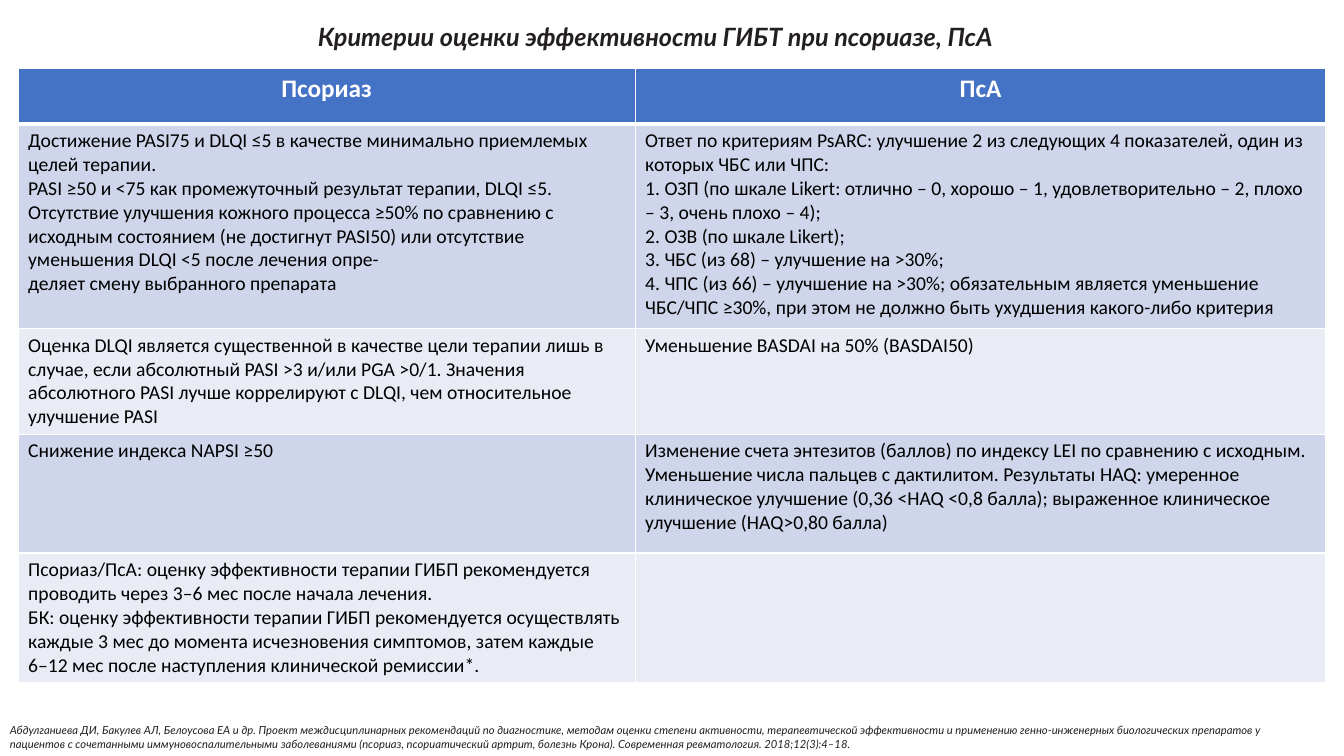
import pptx
import pptx.util
import pptx.dml.color
import pptx.enum.text
import pptx.oxml.ns
import lxml.etree
from dataclasses import dataclass

Inches = pptx.util.Inches
PP_ALIGN = pptx.enum.text.PP_ALIGN
ANCHOR = pptx.enum.text.MSO_ANCHOR

TITLE = "Критерии оценки эффективности ГИБТ при псориазе, ПсА"
HEADERS = ["Псориаз", "ПсА"]
CRITERIA = [
    (
        [
            "Достижение PASI75 и DLQI ≤5 в качестве минимально приемлемых целей терапии.",
            "PASI ≥50 и <75 как промежуточный результат терапии, DLQI ≤5.",
            "Отсутствие улучшения кожного процесса ≥50% по сравнению с исходным состоянием "
            "(не достигнут PASI50) или отсутствие уменьшения DLQI <5 после лечения опре-",
            "деляет смену выбранного препарата",
        ],
        [
            "Ответ по критериям PsARC: улучшение 2 из следующих 4 показателей, один из которых ЧБС или ЧПС:",
            "1. ОЗП (по шкале Likert: отлично – 0, хорошо – 1, удовлетворительно – 2, плохо – 3, очень плохо – 4);",
            "2. ОЗВ (по шкале Likert);",
            "3. ЧБС (из 68) – улучшение на >30%;",
            "4. ЧПС (из 66) – улучшение на >30%; обязательным является уменьшение ЧБС/ЧПС ≥30%, "
            "при этом не должно быть ухудшения какого-либо критерия",
        ],
    ),
    (
        [
            "Оценка DLQI является существенной в качестве цели терапии лишь в случае, если абсолютный "
            "PASI >3 и/или PGA >0/1. Значения абсолютного PASI лучше коррелируют с DLQI, "
            "чем относительное улучшение PASI",
        ],
        ["Уменьшение BASDAI на 50% (BASDAI50)"],
    ),
    (
        ["Снижение индекса NAPSI ≥50"],
        [
            "Изменение счета энтезитов (баллов) по индексу LEI по сравнению с исходным. "
            "Уменьшение числа пальцев с дактилитом. Результаты HAQ: умеренное клиническое улучшение "
            "(0,36 <HAQ <0,8 балла); выраженное клиническое улучшение (HAQ>0,80 балла)",
        ],
    ),
    (
        [
            "Псориаз/ПсА: оценку эффективности терапии ГИБП рекомендуется проводить "
            "через 3–6 мес после начала лечения.",
            "БК: оценку эффективности терапии ГИБП рекомендуется осуществлять каждые 3 мес "
            "до момента исчезновения симптомов, затем каждые",
            "6–12 мес после наступления клинической ремиссии*.",
        ],
        [],
    ),
]
CITATION = (
    "Абдулганиева ДИ, Бакулев АЛ, Белоусова ЕА и др. Проект междисциплинарных рекомендаций по "
    "диагностике, методам оценки степени активности, терапевтической эффективности и применению "
    "генно-инженерных биологических препаратов у пациентов с сочетанными иммуновоспалительными "
    "заболеваниями (псориаз, псориатический артрит, болезнь Крона). Современная ревматология. "
    "2018;12(3):4–18."
)
COLUMN_WIDTHS = [6.12, 6.85]
ROW_HEIGHTS = [0.55, 2.03, 1.02, 1.18, 1.28]
TABLE_LEFT, TABLE_TOP = 0.18, 0.68


@dataclass(frozen=True)
class Theme:
    ink: str = "231F20"
    black: str = "000000"
    white: str = "FFFFFF"
    header: str = "4472C4"
    bands: tuple = ("CFD5EA", "E9EBF5")
    heading_size: int = 18
    body_size: int = 14
    citation_size: int = 8
    accent_font: str = "Lato"
    table_font: str = "Calibri"
    border: int = 1
    header_border: int = 3


THEME = Theme()
TITLE_FORMAT = dict(name=THEME.accent_font, size=THEME.heading_size, color=THEME.ink, bold=True, italic=True)
HEADER_FORMAT = dict(name=THEME.table_font, size=THEME.heading_size, color=THEME.white, bold=True)
BODY_FORMAT = dict(name=THEME.table_font, size=THEME.body_size, color=THEME.black, bold=False)
CITATION_FORMAT = dict(name=THEME.accent_font, size=THEME.citation_size, color=THEME.ink, italic=True)


def rgb(color):
    return pptx.dml.color.RGBColor.from_string(color)


def write(frame, lines, format_values, align=PP_ALIGN.LEFT, spacing=None):
    """Put each line in its own paragraph, with one format for all."""
    for index, line in enumerate(lines):
        para = frame.add_paragraph() if index else frame.paragraphs[0]
        para.alignment = align
        para.line_spacing = spacing
        span = para.add_run()
        span.text = line
        for key, value in format_values.items():
            if key == "color":
                span.font.color.rgb = rgb(value)
            else:
                setattr(span.font, key, pptx.util.Pt(value) if key == "size" else value)


def set_borders(cell, widths):
    """Draw white cell borders; widths maps side tags to points."""
    properties = cell._tc.get_or_add_tcPr()
    qn = pptx.oxml.ns.qn
    for side, width in widths.items():
        line = lxml.etree.SubElement(properties, qn(f"a:{side}"), w=str(pptx.util.Pt(width)))
        fill = lxml.etree.SubElement(line, qn("a:solidFill"))
        lxml.etree.SubElement(fill, qn("a:srgbClr"), val=THEME.white)


def add_title(page):
    title = page.shapes.title
    title.left, title.top, title.width, title.height = map(Inches, (0.75, 0.08, 11.5, 0.6))
    title.text_frame.vertical_anchor = ANCHOR.MIDDLE
    write(title.text_frame, [TITLE], TITLE_FORMAT, PP_ALIGN.CENTER, 0.9)


def add_criteria_table(page):
    rows = [[[header] for header in HEADERS], *CRITERIA]
    table = page.shapes.add_table(
        len(rows), len(HEADERS), Inches(TABLE_LEFT), Inches(TABLE_TOP),
        Inches(sum(COLUMN_WIDTHS)), Inches(sum(ROW_HEIGHTS)),
    ).table
    for column, width in zip(table.columns, COLUMN_WIDTHS):
        column.width = Inches(width)
    for row_index, (row, height) in enumerate(zip(rows, ROW_HEIGHTS)):
        table.rows[row_index].height = Inches(height)
        is_header = row_index == 0
        color = THEME.header if is_header else THEME.bands[(row_index - 1) % 2]
        borders = dict.fromkeys(("lnL", "lnR", "lnT", "lnB"), THEME.border)
        if is_header:
            borders["lnB"] = THEME.header_border
        elif row_index == 1:
            borders["lnT"] = THEME.header_border
        for column_index, lines in enumerate(row):
            cell = table.cell(row_index, column_index)
            set_borders(cell, borders)
            cell.fill.solid()
            cell.fill.fore_color.rgb = rgb(color)
            write(
                cell.text_frame, lines,
                HEADER_FORMAT if is_header else BODY_FORMAT,
                PP_ALIGN.CENTER if is_header else PP_ALIGN.LEFT,
            )


def add_citation(page):
    box = page.shapes.add_textbox(*map(Inches, (0, 7.13, 13.2, 0.37)))
    box.text_frame.word_wrap = True
    box.text_frame.auto_size = pptx.enum.text.MSO_AUTO_SIZE.SHAPE_TO_FIT_TEXT
    write(box.text_frame, [CITATION], CITATION_FORMAT)


def main():
    deck = pptx.Presentation()
    deck.slide_width, deck.slide_height = Inches(13.33), Inches(7.5)
    page = deck.slides.add_slide(deck.slide_layouts.get_by_name("Title Only"))
    add_title(page)
    add_criteria_table(page)
    add_citation(page)
    deck.save("out.pptx")


if __name__ == "__main__":
    main()
